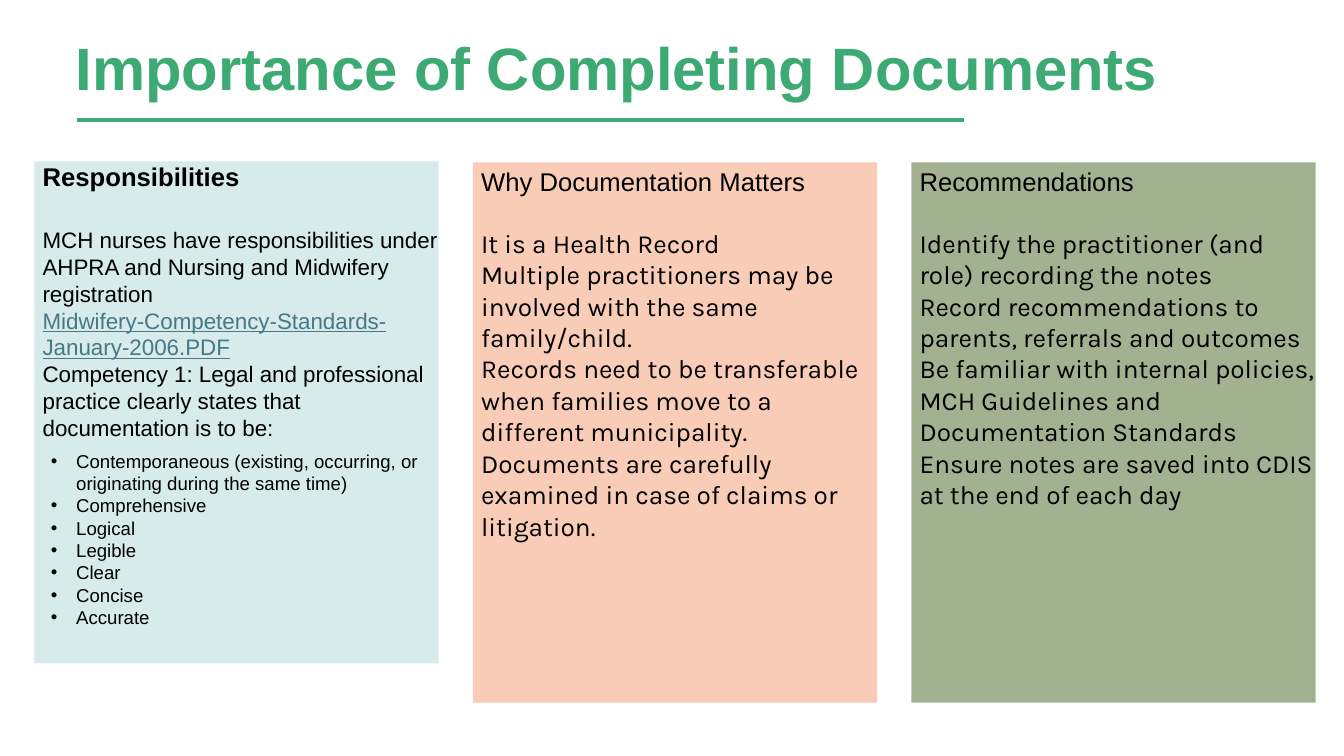
from dataclasses import dataclass

from lxml import etree
from pptx import Presentation
from pptx import util as u
from pptx.dml.color import RGBColor
from pptx.enum import shapes, text
from pptx.oxml.ns import qn

COLORS = {
    "green": "3DAA73",
    "aqua": "D7EBEB",
    "peach": "F9CCB8",
    "sage": "A2B290",
    "link": "467886",
    "black": "000000",
}
PANEL_LEFT, PANEL_STEP, PANEL_WIDTH = 24.6, 313.2, 288.7


@dataclass(frozen=True)
class Style:
    size: float
    font: str = "Arial"
    color: str = "black"
    bold: bool = False
    underline: bool = False
    line: float | None = None
    bullet: bool = False
    indent: float = 5.8


@dataclass(frozen=True)
class Block:
    """Lines that share a style, with a gap above the first one."""
    style: Style
    lines: tuple[str, ...]
    gap: float = 0


@dataclass(frozen=True)
class Panel:
    fill: str
    top: float
    height: float
    blocks: tuple[Block, ...]


TITLE = Style(42.7, color="green", bold=True, line=56, indent=0)
LEAD = Style(18.3, bold=True)
HEADING = Style(18.3, line=24.3)
DUTY = Style(16)
LINK = Style(16, color="link", underline=True)
BULLET = Style(13.3, bullet=True, indent=29.8)
NOTE = Style(18.7, font="Karla")

PANELS = (
    Panel("aqua", 115.2, 358.6, (
        Block(LEAD, ("Responsibilities",)),
        Block(DUTY, ("MCH nurses have responsibilities under AHPRA and Nursing "
                     "and Midwifery registration",), 24.3),
        Block(LINK, ("Midwifery-Competency-Standards-January-2006.PDF",)),
        Block(DUTY, ("Competency 1: Legal and professional practice clearly "
                     "states that documentation is to be:",)),
        Block(BULLET, (
            "Contemporaneous (existing, occurring, or originating during the same time)",
            "Comprehensive", "Logical", "Legible", "Clear", "Concise", "Accurate",
        ), 6.1),
    )),
    Panel("peach", 115.9, 385.9, (
        Block(HEADING, ("Why Documentation Matters",)),
        Block(NOTE, (
            "It is a Health Record",
            "Multiple practitioners may be involved with the same family/child.",
            "Records need to be transferable when families move to a different municipality.",
            "Documents are carefully examined in case of claims or litigation.",
        ), 22),
    )),
    Panel("sage", 115.9, 385.9, (
        Block(HEADING, ("Recommendations",)),
        Block(NOTE, (
            "Identify the practitioner (and role) recording the notes",
            "Record recommendations to parents, referrals and outcomes",
            "Be familiar with internal policies, MCH Guidelines and Documentation Standards",
            "Ensure notes are saved into CDIS at the end of each day",
        ), 22),
    )),
)


def rgb(name: str) -> RGBColor:
    return RGBColor.from_string(COLORS[name])


def place(box, left: float, top: float, width: float, height: float) -> None:
    box.left, box.top = u.Pt(left), u.Pt(top)
    box.width, box.height = u.Pt(width), u.Pt(height)


def write(box, blocks: tuple[Block, ...]) -> None:
    frame = box.text_frame
    frame.word_wrap = True
    frame.auto_size = text.MSO_AUTO_SIZE.NONE
    frame.vertical_anchor = text.MSO_ANCHOR.TOP
    frame.margin_left = frame.margin_top = frame.margin_right = frame.margin_bottom = 0
    rows = [(block, number, line) for block in blocks
            for number, line in enumerate(block.lines)]
    for position, (block, number, line) in enumerate(rows):
        para = frame.add_paragraph() if position else frame.paragraphs[0]
        para.text = line
        format_paragraph(para, block.style, block.gap if number == 0 else 0)


def format_paragraph(para, style: Style, gap: float) -> None:
    para.alignment = text.PP_ALIGN.LEFT
    para.level = 1 if style.bullet else 0
    para.line_spacing = u.Pt(style.line) if style.line else 1.0
    para.space_before, para.space_after = u.Pt(gap), u.Pt(0)
    properties = para._p.get_or_add_pPr()
    properties.set("marL", str(u.Pt(style.indent)))
    properties.set("indent", str(u.Pt(-18 if style.bullet else 0)))
    if style.bullet:
        etree.SubElement(properties, qn("a:buFont")).set("typeface", "Arial")
        etree.SubElement(properties, qn("a:buChar")).set("char", "•")
    else:
        etree.SubElement(properties, qn("a:buNone"))
    font = para.font
    font.name, font.size = style.font, u.Pt(style.size)
    font.bold, font.underline = style.bold, style.underline
    font.color.rgb = rgb(style.color)


def add_rule(page) -> None:
    """Draw the line under the title."""
    rule = page.shapes.add_connector(
        shapes.MSO_CONNECTOR.STRAIGHT, u.Pt(688.3), u.Pt(85.9), u.Pt(54.9), u.Pt(85.9))
    rule.line.color.rgb = rgb("green")
    rule.line.width = u.Pt(3)
    etree.SubElement(rule._element.spPr, qn("a:effectLst"))


def main() -> None:
    deck = Presentation()
    deck.slide_width, deck.slide_height = u.Pt(960), u.Pt(540)
    page = deck.slides.add_slide(deck.slide_layouts.get_by_name("Comparison"))
    title, *bodies = page.placeholders
    place(title, 54, 17.3, 866.9, 54)
    write(title, (Block(TITLE, ("Importance of Completing Documents",)),))
    add_rule(page)
    for column, (panel, body) in enumerate(zip(PANELS, bodies)):
        place(body, PANEL_LEFT + column * PANEL_STEP, panel.top, PANEL_WIDTH, panel.height)
        body.fill.solid()
        body.fill.fore_color.rgb = rgb(panel.fill)
        write(body, panel.blocks)
    for spare in bodies[len(PANELS):]:
        spare._element.getparent().remove(spare._element)
    deck.save("out.pptx")


if __name__ == "__main__":
    main()
